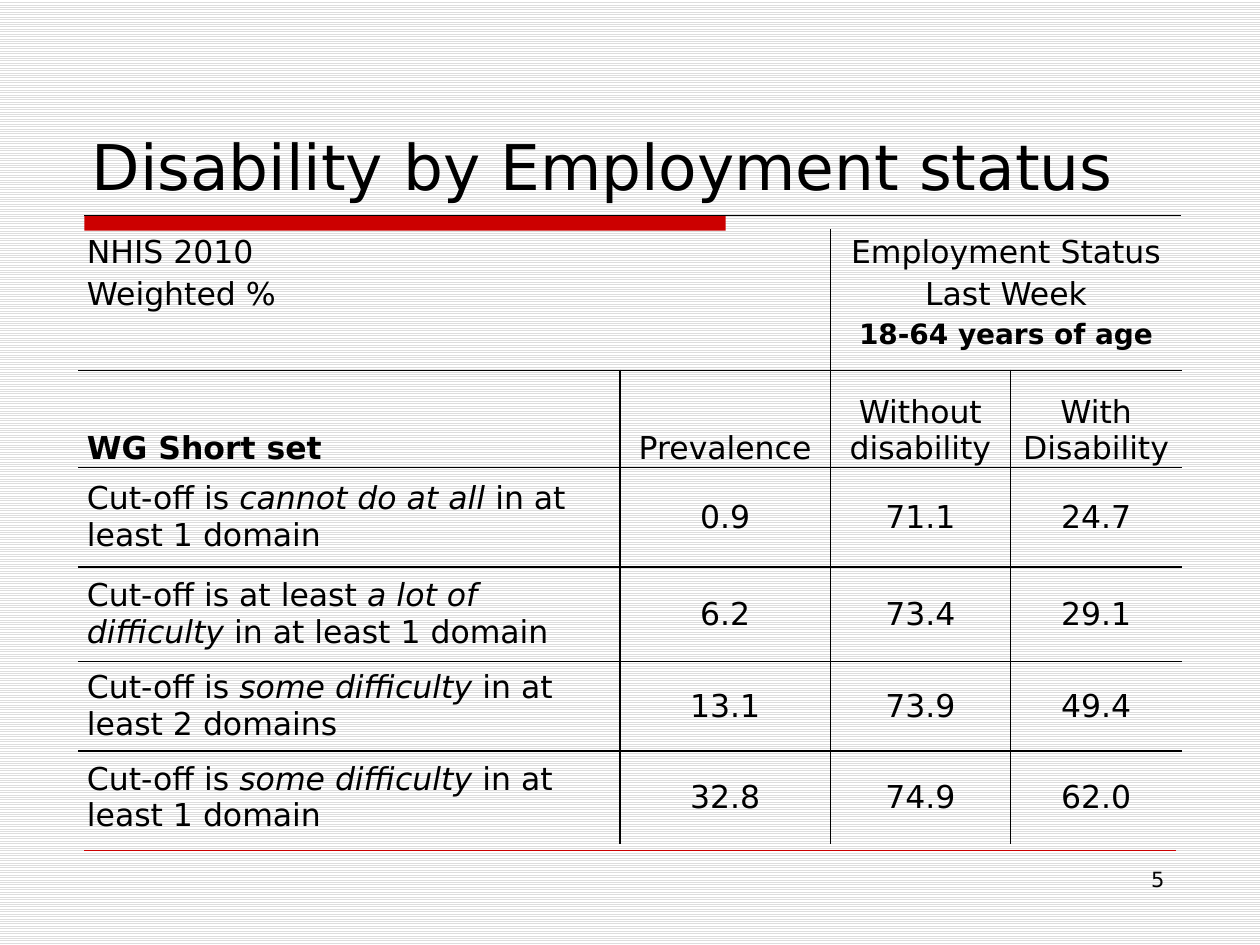
from lxml import etree
from pptx import Presentation
from pptx import util as u
from pptx.dml.color import RGBColor
from pptx.enum import dml, shapes, text
from pptx.oxml import ns

COLORS = {"ink": "000000", "red": "CC0000", "stripe": "DDDDDD", "paper": "FFFFFF"}
COLORS = {name: RGBColor.from_string(value) for name, value in COLORS.items()}
FONT = "DejaVu Sans"
LEFT, CENTER, RIGHT = text.PP_ALIGN.LEFT, text.PP_ALIGN.CENTER, text.PP_ALIGN.RIGHT
TOP, MIDDLE, BOTTOM = text.MSO_ANCHOR.TOP, text.MSO_ANCHOR.MIDDLE, text.MSO_ANCHOR.BOTTOM


def write(frame, lines, size, align=LEFT, spacing=None):
    frame.word_wrap = True
    for index, line in enumerate(lines):
        para = frame.paragraphs[0] if index == 0 else frame.add_paragraph()
        para.alignment = align
        para.line_spacing = spacing
        para.font.name = FONT
        para.font.size = u.Pt(size)
        para.font.color.rgb = COLORS["ink"]
        for part, words in enumerate(line.split("|")):
            span = para.add_run()
            span.text = words
            if part == 1:
                span.font.italic = True


def set_borders(cell, edges):
    props = cell._tc.get_or_add_tcPr()
    for index, (side, visible) in enumerate(edges.items()):
        line = etree.Element(ns.qn(f"a:ln{side}"), w=str(u.Pt(1)))
        fill = etree.SubElement(line, ns.qn("a:solidFill" if visible else "a:noFill"))
        if visible:
            etree.SubElement(fill, ns.qn("a:srgbClr"), val=str(COLORS["ink"]))
        props.insert(index, line)


deck = Presentation()
deck.slide_width, deck.slide_height = u.Inches(10), u.Inches(7.5)
page = deck.slides.add_slide(deck.slide_layouts[6])
backdrop = page.background.fill
backdrop.patterned()
backdrop.pattern = dml.MSO_PATTERN.LIGHT_HORIZONTAL
backdrop.fore_color.rgb = COLORS["stripe"]
backdrop.back_color.rgb = COLORS["paper"]

bar = page.shapes.add_shape(
    shapes.MSO_SHAPE.RECTANGLE, u.Inches(0.67), u.Inches(1.71), u.Inches(5.09), u.Inches(0.12)
)
bar.shadow.inherit = False
bar.fill.solid()
bar.fill.fore_color.rgb = COLORS["red"]
bar.line.fill.background()

for y, end, color, width in [(1.71, 9.37, "ink", 0.75), (6.75, 9.33, "red", 0.25)]:
    rule = page.shapes.add_connector(
        shapes.MSO_CONNECTOR.STRAIGHT, u.Inches(0.67), u.Inches(y), u.Inches(end), u.Inches(y)
    )
    rule.line.color.rgb = COLORS[color]
    rule.line.width = u.Pt(width)
    etree.SubElement(rule._element.spPr, ns.qn("a:effectLst"))

for words, left, top, width, height, size, align, anchor in [
    ("Disability by Employment status", 0.63, 0.33, 8.75, 1.33, 36, LEFT, BOTTOM),
    ("5", 7.17, 6.83, 2.17, 0.52, 12, RIGHT, TOP),
]:
    box = page.shapes.add_textbox(*map(u.Inches, (left, top, width, height)))
    box.text_frame.vertical_anchor = anchor
    write(box.text_frame, [words], size, align)

widths = [4.3, 1.67, 1.43, 1.36]
heights = [1.12, 0.77, 0.79, 0.75, 0.71, 0.74]
rows = [
    ["NHIS 2010\nWeighted %", "", "Employment Status Last Week\n18-64 years of age", ""],
    ["WG Short set", "Prevalence", "Without\ndisability", "With\nDisability"],
    ["Cut-off is |cannot do at all| in at least 1 domain", "0.9", "71.1", "24.7"],
    ["Cut-off is at least |a lot of difficulty| in at least 1 domain", "6.2", "73.4", "29.1"],
    ["Cut-off is |some difficulty| in at least 2 domains", "13.1", "73.9", "49.4"],
    ["Cut-off is |some difficulty| in at least 1 domain", "32.8", "74.9", "62.0"],
]
table = page.shapes.add_table(
    len(rows), len(widths), u.Inches(0.62), u.Inches(1.82),
    u.Inches(sum(widths)), u.Inches(sum(heights)),
).table
table.first_row = table.horz_banding = False
for column, width in zip(table.columns, widths):
    column.width = u.Inches(width)
for row, height in zip(table.rows, heights):
    row.height = u.Inches(height)
for start in (0, 2):
    table.cell(0, start).merge(table.cell(0, start + 1))

for r, row in enumerate(rows):
    for c, words in enumerate(row):
        cell = table.cell(r, c)
        cell.fill.background()
        cell.margin_left = cell.margin_right = u.Inches(0.07)
        cell.margin_top = cell.margin_bottom = 0
        cell.vertical_anchor = (TOP, BOTTOM)[r] if r < 2 else MIDDLE
        reach = cell.span_width if cell.is_merge_origin else 1
        set_borders(cell, {
            "L": c > 0, "R": c + reach < len(widths), "T": r > 0, "B": r + 1 < len(rows),
        })
        if words:
            write(cell.text_frame, words.split("\n"), 18, CENTER if c else LEFT,
                  1.15 if r == 0 else None)
            if c == 0 and r > 1:
                cell.text_frame.paragraphs[0].space_after = u.Pt(6)

ages = table.cell(0, 2).text_frame.paragraphs[1]
ages.font.size = u.Pt(16)
ages.font.bold = True
table.cell(1, 0).text_frame.paragraphs[0].font.bold = True

deck.save("out.pptx")
